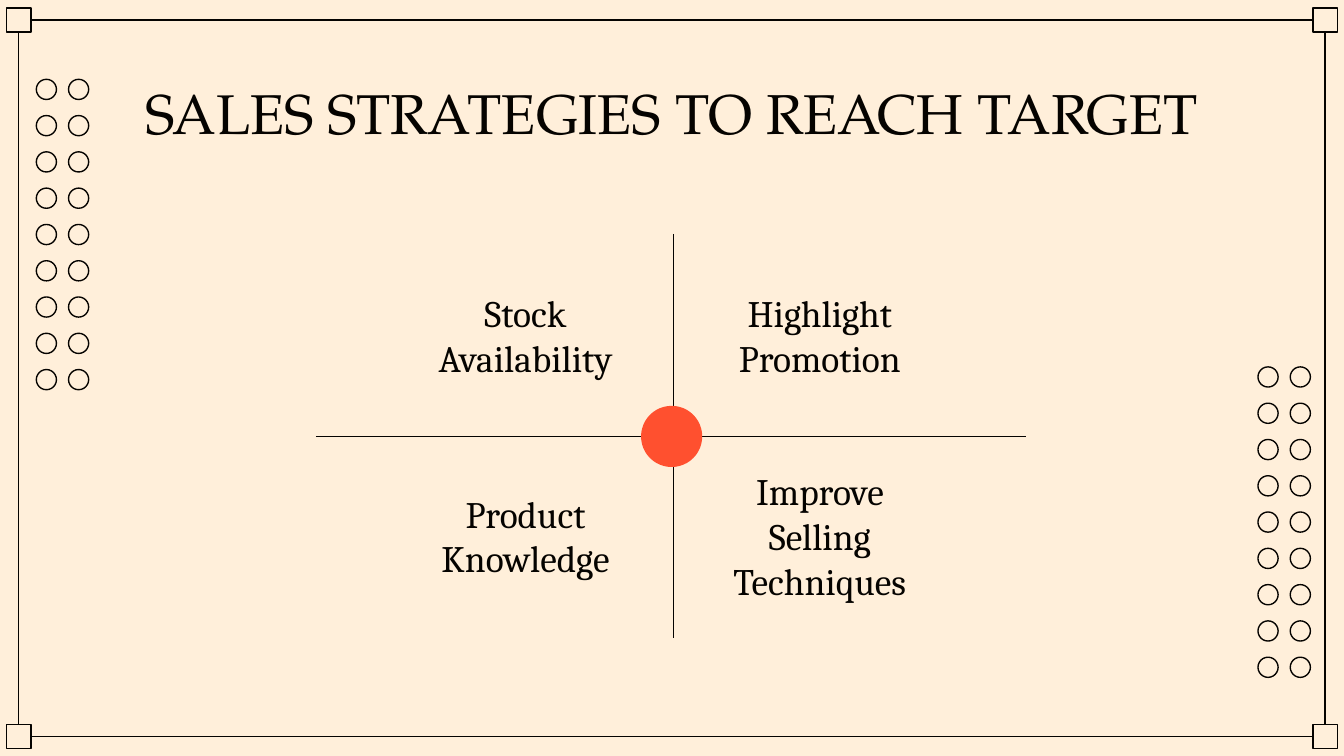
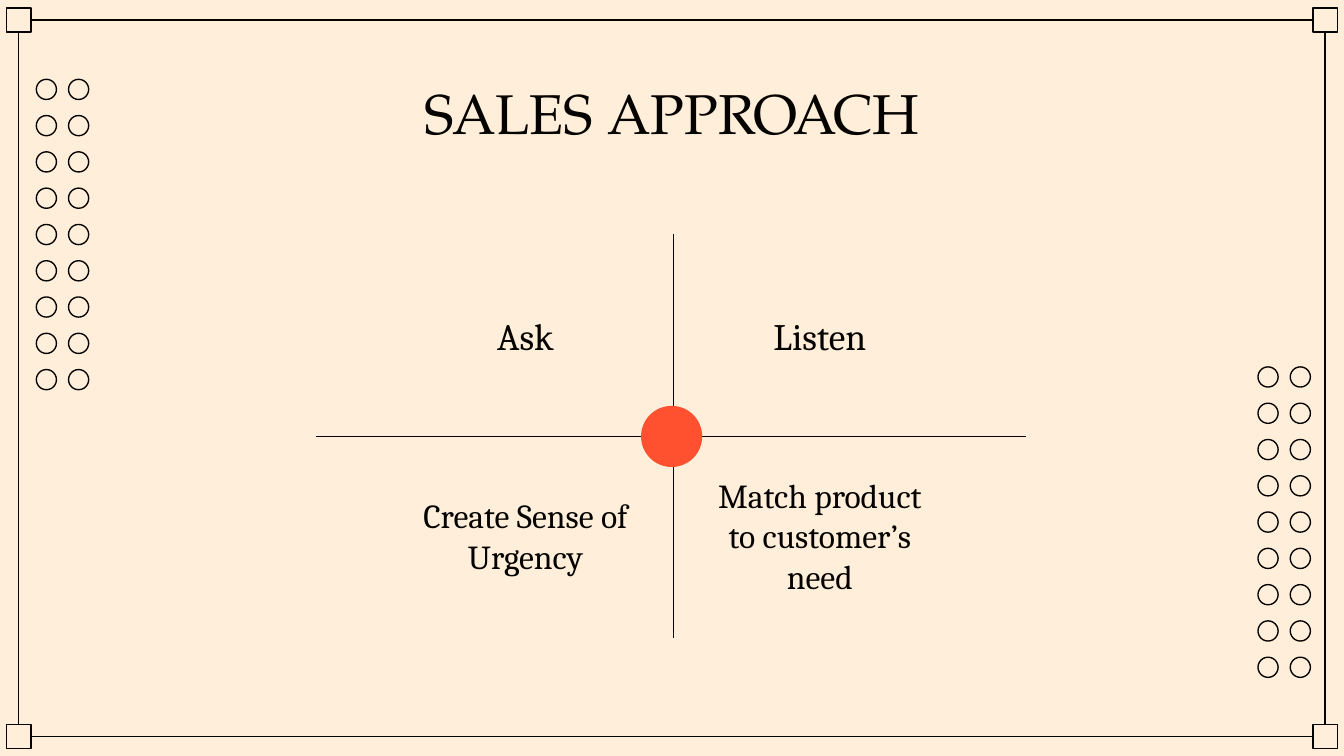
"""Build two framed quadrant slides about selling."""
from dataclasses import dataclass
from typing import NamedTuple, Optional

from lxml.etree import SubElement
from pptx import Presentation
from pptx.dml.color import RGBColor
from pptx.enum.shapes import MSO_CONNECTOR, MSO_SHAPE
from pptx.enum.text import MSO_ANCHOR, PP_ALIGN
from pptx.oxml.ns import qn
from pptx.shapes.autoshape import Shape
from pptx.shapes.connector import Connector
from pptx.slide import Slide
from pptx.util import Emu, Pt

PX = 4572
TOP, LEFT, BOTTOM, RIGHT = range(4)


@dataclass(frozen=True)
class Theme:
    paper: RGBColor = RGBColor.from_string("FFEFDA")
    ink: RGBColor = RGBColor.from_string("050300")
    accent: RGBColor = RGBColor.from_string("FF502F")
    title_font: str = "TeX Gyre Pagella"
    body_font: str = "Cambria"
    title_size: int = 30
    body_size: int = 20
    small_size: int = 18
    rule: float = 0.75


class Box(NamedTuple):
    x: int
    y: int
    w: int
    h: int


class DotGrid(NamedTuple):
    x: int
    y: int
    cols: int = 2
    rows: int = 9
    col_step: int = 48
    row_step: int = 54
    size: int = 30


class Label(NamedTuple):
    text: str
    size: int


class Quadrants(NamedTuple):
    title: str
    labels: tuple[Label, ...]


THEME = Theme()
WIDTH, HEIGHT = 2000, 1125
INSET = 20
CORNER = 36
CORNER_XS, CORNER_YS = (10, 1954), (12, 1078)
FRAME = ((0, RIGHT, 1, LEFT), (0, BOTTOM, 2, TOP),
         (2, RIGHT, 3, LEFT), (3, TOP, 1, BOTTOM))
DOT_GRIDS = (DotGrid(54, 118), DotGrid(1872, 546))
TITLE_BOX = Box(157, 97, 1686, 126)
AXES = ((470, 650, 1527, 650), (1002, 348, 1002, 950))
LABEL_XS, LABEL_YS = (600, 1038), (445, 743)
LABEL_W, LABEL_H = 364, 108
HUB = Box(954, 604, 91, 91)

SLIDES = (
    Quadrants("SALES STRATEGIES TO REACH TARGET", (
        Label("Stock Availability", THEME.body_size),
        Label("Highlight Promotion", THEME.body_size),
        Label("Product Knowledge", THEME.body_size),
        Label("Improve Selling Techniques", THEME.body_size))),
    Quadrants("SALES APPROACH", (
        Label("Ask", THEME.body_size),
        Label("Listen", THEME.body_size),
        Label("Create Sense of Urgency", THEME.small_size),
        Label("Match product to customer’s need", THEME.small_size))),
)


def px(*values: int) -> list[Emu]:
    return [Emu(v * PX) for v in values]


def apply(target: object, values: dict[str, object]) -> None:
    for name, value in values.items():
        setattr(target, name, value)


def add_shape(s: Slide, kind: MSO_SHAPE, box: Box,
              fill: Optional[RGBColor] = None) -> Shape:
    sp = s.shapes.add_shape(kind, *px(*box))
    sp.shadow.inherit = False
    if fill is None:
        sp.fill.background()
        sp.line.color.rgb = THEME.ink
        sp.line.width = Pt(THEME.rule)
    else:
        sp.fill.solid()
        sp.fill.fore_color.rgb = fill
        sp.line.fill.background()
    return sp


def add_line(s: Slide, x1: int, y1: int, x2: int, y2: int) -> Connector:
    cx = s.shapes.add_connector(MSO_CONNECTOR.STRAIGHT, *px(x1, y1, x2, y2))
    cx.line.color.rgb = THEME.ink
    cx.line.width = Pt(THEME.rule)
    SubElement(cx._element.spPr, qn("a:effectLst"))
    return cx


def add_text(s: Slide, box: Box, text: str, font: str, size: int,
             anchor: MSO_ANCHOR) -> None:
    tf = s.shapes.add_textbox(*px(*box)).text_frame
    inset = Emu(INSET * PX)
    apply(tf, {"word_wrap": True, "vertical_anchor": anchor,
               "margin_left": inset, "margin_right": inset,
               "margin_top": inset, "margin_bottom": inset})
    p = tf.paragraphs[0]
    p.alignment = PP_ALIGN.CENTER
    r = p.add_run()
    r.text = text
    apply(r.font, {"name": font, "size": Pt(size)})
    r.font.color.rgb = THEME.ink


def add_frame(s: Slide) -> None:
    corners = [add_shape(s, MSO_SHAPE.RECTANGLE, Box(x, y, CORNER, CORNER))
               for y in CORNER_YS for x in CORNER_XS]
    for start, start_side, end, end_side in FRAME:
        cx = add_line(s, 0, 0, 0, 0)
        cx.begin_connect(corners[start], start_side)
        cx.end_connect(corners[end], end_side)


def add_dots(s: Slide, grid: DotGrid) -> None:
    for row in range(grid.rows):
        for col in range(grid.cols):
            add_shape(s, MSO_SHAPE.OVAL,
                      Box(grid.x + col * grid.col_step,
                          grid.y + row * grid.row_step, grid.size, grid.size))


def add_quadrants(s: Slide, content: Quadrants) -> None:
    add_text(s, TITLE_BOX, content.title, THEME.title_font,
             THEME.title_size, MSO_ANCHOR.TOP)
    for axis in AXES:
        add_line(s, *axis)
    cells = [Box(x, y, LABEL_W, LABEL_H) for y in LABEL_YS for x in LABEL_XS]
    for box, label in zip(cells, content.labels):
        add_text(s, box, label.text, THEME.body_font, label.size,
                 MSO_ANCHOR.MIDDLE)
    add_shape(s, MSO_SHAPE.OVAL, HUB, THEME.accent)


def main() -> None:
    prs = Presentation()
    prs.slide_width, prs.slide_height = px(WIDTH, HEIGHT)
    for content in SLIDES:
        s = prs.slides.add_slide(prs.slide_layouts[6])
        s.background.fill.solid()
        s.background.fill.fore_color.rgb = THEME.paper
        add_frame(s)
        for grid in DOT_GRIDS:
            add_dots(s, grid)
        add_quadrants(s, content)
    prs.save("out.pptx")


if __name__ == "__main__":
    main()
